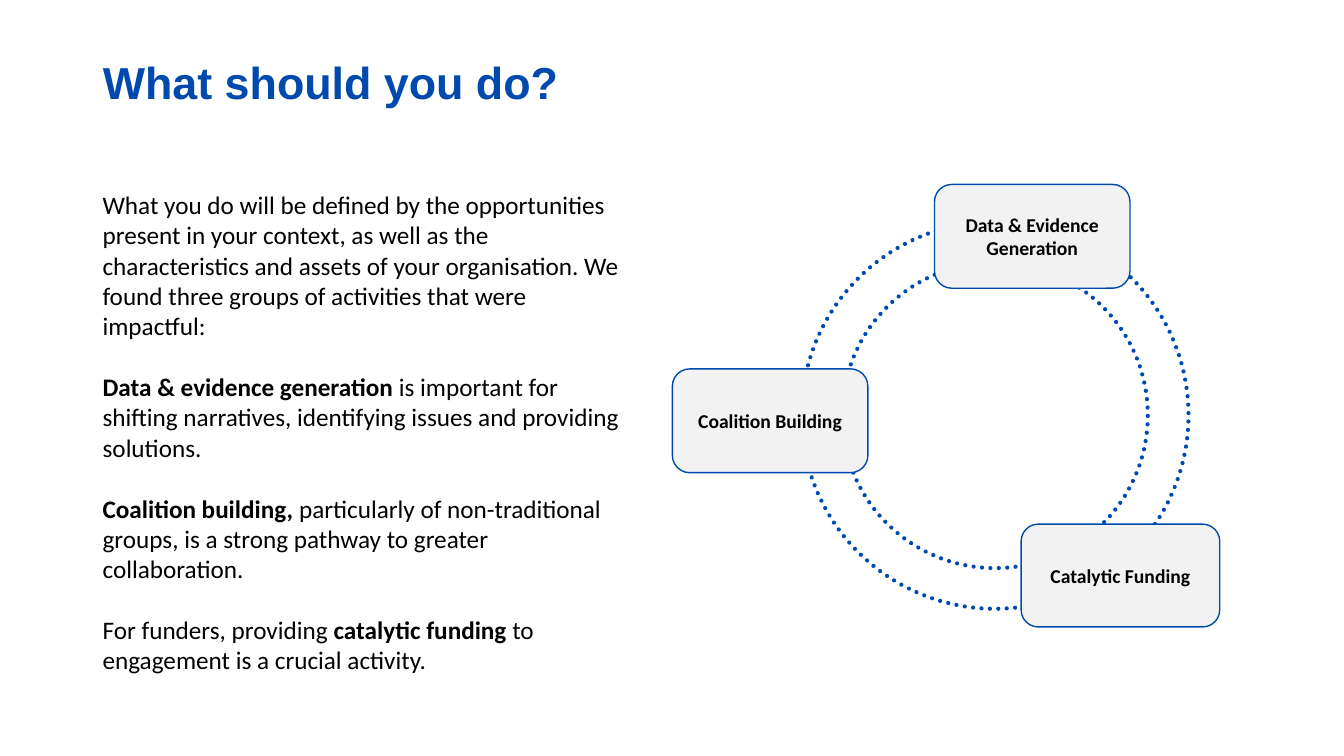
import pptx
import pptx.dml.color
import pptx.enum.dml
import pptx.enum.shapes
import pptx.enum.text
import pptx.oxml.ns
import pptx.util

BLUE, GREY, WHITE, BLACK = "004AAD", "F2F2F2", "FFFFFF", "000000"
ANCHOR = pptx.enum.text.MSO_ANCHOR
ALIGN = pptx.enum.text.PP_ALIGN
SHAPE = pptx.enum.shapes.MSO_SHAPE

PARAGRAPHS = [
    [("What you do will be defined by the opportunities present in your context, "
      "as well as the characteristics and assets of your organisation. We found "
      "three groups of activities that were impactful:", False)],
    [("Data & evidence generation ", True),
     ("is important for shifting narratives, identifying issues and providing solutions.", False)],
    [("Coalition building, ", True),
     ("particularly of non-traditional groups, is a strong pathway to greater collaboration.", False)],
    [("For funders, providing ", False), ("catalytic funding ", True),
     ("to engagement is a crucial activity.", False)],
]

ACTIVITIES = [
    ("Data & Evidence Generation", (69.53, 24.4, 14.55, 13.73)),
    ("Coalition Building", (50.03, 48.8, 14.55, 13.73)),
    ("Catalytic Funding", (75.98, 69.33, 14.78, 13.6)),
]


def colour(value):
    return pptx.dml.color.RGBColor.from_string(value)


class SlideBuilder:
    """Draws styled elements on one slide, placed in percent of its width and height."""

    def __init__(self, presentation):
        self.width = presentation.slide_width
        self.height = presentation.slide_height
        self.slide = presentation.slides.add_slide(presentation.slide_layouts[5])

    def place(self, left, top, width, height):
        return (round(left * self.width / 100), round(top * self.height / 100),
                round(width * self.width / 100), round(height * self.height / 100))

    def style(self, paragraph, size, value=BLACK, name="Calibri", bold=None):
        font = paragraph.font
        font.size = pptx.util.Pt(size)
        font.name = name
        font.bold = bold
        font.color.rgb = colour(value)

    def title(self, text, box):
        shape = self.slide.shapes.title
        shape.left, shape.top, shape.width, shape.height = self.place(*box)
        shape.text_frame.text = text
        shape.text_frame.vertical_anchor = ANCHOR.MIDDLE
        paragraph = shape.text_frame.paragraphs[0]
        paragraph.alignment = ALIGN.LEFT
        paragraph.line_spacing = 0.9
        self.style(paragraph, 32, BLUE, "Arial", True)

    def shape(self, kind, box, fill, line_width):
        shape = self.slide.shapes.add_shape(kind, *self.place(*box))
        shape.shadow.inherit = False
        shape.fill.solid()
        shape.fill.fore_color.rgb = colour(fill)
        shape.line.color.rgb = colour(BLUE)
        shape.line.width = pptx.util.Pt(line_width)
        return shape

    def ring(self, box, thickness):
        shape = self.shape(SHAPE.DONUT, box, WHITE, 3)
        shape.adjustments[0] = thickness
        shape.line.dash_style = pptx.enum.dml.MSO_LINE.ROUND_DOT
        shape._element.spPr.find(pptx.oxml.ns.qn("a:ln")).set("cap", "rnd")

    def activity(self, text, box):
        shape = self.shape(SHAPE.ROUNDED_RECTANGLE, box, GREY, 1)
        frame = shape.text_frame
        frame.text = text
        frame.word_wrap = True
        frame.vertical_anchor = ANCHOR.MIDDLE
        paragraph = frame.paragraphs[0]
        paragraph.alignment = ALIGN.CENTER
        self.style(paragraph, 14, bold=True)

    def body(self, paragraphs, box):
        frame = self.slide.shapes.add_textbox(*self.place(*box)).text_frame
        frame.word_wrap = True
        for index, parts in enumerate(paragraphs):
            paragraph = frame.add_paragraph() if index else frame.paragraphs[0]
            paragraph.space_before = pptx.util.Pt(22 if index else 0)
            self.style(paragraph, 18)
            for text, bold in parts:
                run = paragraph.add_run()
                run.text = text
                run.font.bold = bold


def main():
    presentation = pptx.Presentation()
    presentation.slide_width = pptx.util.Inches(13.33)
    presentation.slide_height = pptx.util.Inches(7.5)
    builder = SlideBuilder(presentation)
    builder.title("What should you do?", (6.9, 5.33, 50.93, 11.87))
    builder.ring((59.63, 29.33, 28.8, 51.2), 0.105)
    for text, box in ACTIVITIES:
        builder.activity(text, box)
    builder.body(PARAGRAPHS, (6.9, 24.4, 40.73, 66))
    presentation.save("out.pptx")


if __name__ == "__main__":
    main()
